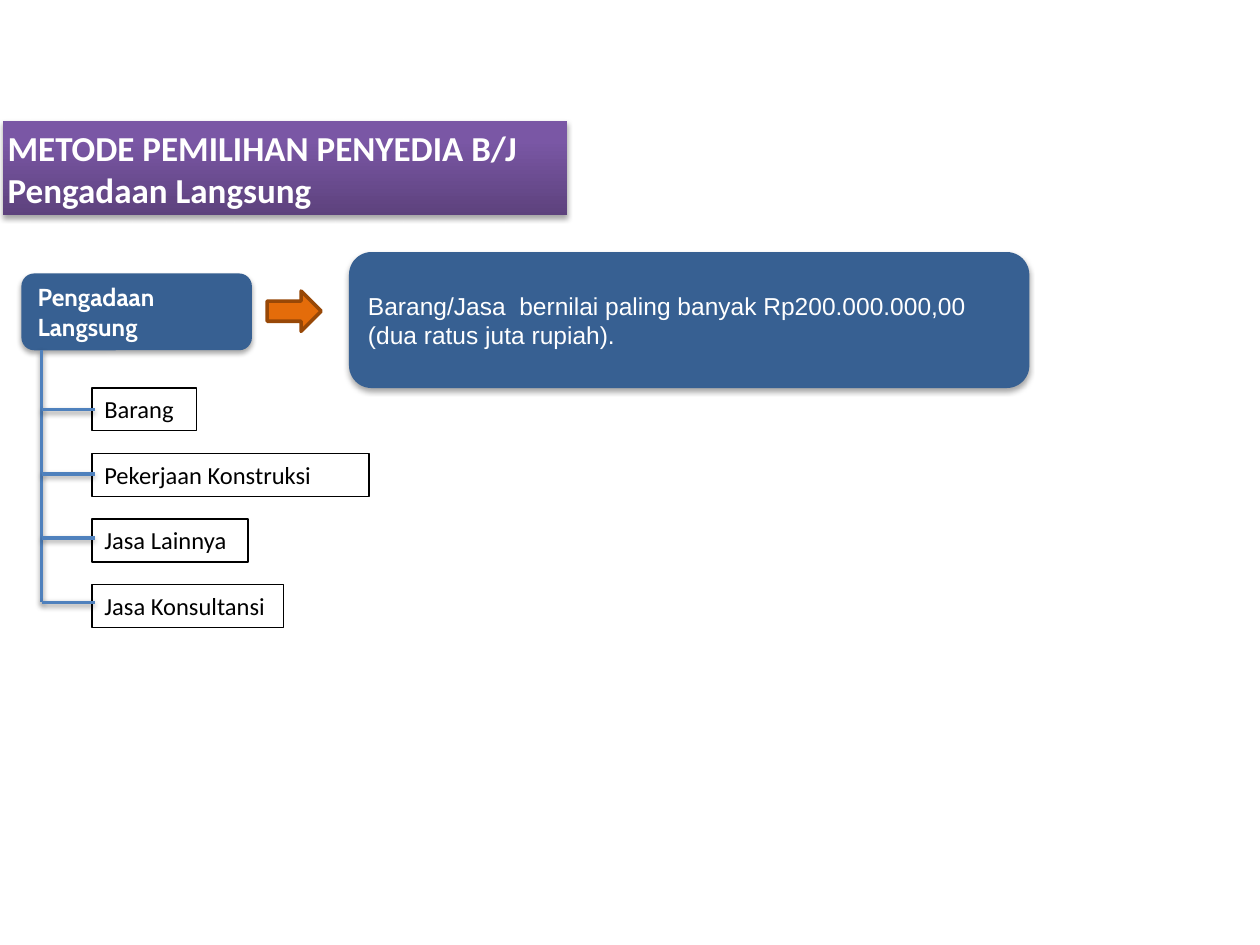
"""Build a slide on direct procurement: its value limit and the four kinds it covers."""
from lxml.etree import SubElement
from pptx import Presentation
from pptx.dml.color import RGBColor
from pptx.enum.shapes import MSO_CONNECTOR as Connector, MSO_SHAPE as Shape
from pptx.enum.text import MSO_ANCHOR as Anchor, MSO_AUTO_SIZE as AutoSize, PP_ALIGN as Align
from pptx.oxml import parse_xml
from pptx.oxml.ns import nsdecls, qn
from pptx.util import Inches, Pt


def add_shadow(item, opacity=35, distance=1.8):
    effects = SubElement(item._element.spPr, qn("a:effectLst"))
    effects.append(parse_xml(
        f'<a:outerShdw {nsdecls("a")} blurRad="{Pt(3.1)}" dist="{Pt(distance)}" dir="5400000" '
        f'algn="ctr" rotWithShape="0"><a:srgbClr val="000000">'
        f'<a:alpha val="{opacity * 1000}"/></a:srgbClr></a:outerShdw>'))


def write(item, lines, size, face, color, bold=False, anchor=Anchor.MIDDLE):
    frame = item.text_frame
    frame.word_wrap = True
    frame.vertical_anchor = anchor
    for index, line in enumerate(lines):
        paragraph = frame.paragraphs[0] if index == 0 else frame.add_paragraph()
        paragraph.alignment = Align.LEFT
        run = paragraph.add_run()
        run.text = line
        run.font.size, run.font.name, run.font.bold = Pt(size), face, bold
        run.font.color.rgb = RGBColor.from_string(color)


deck = Presentation()
deck.slide_width, deck.slide_height = Inches(10), Inches(7.5)
slide = deck.slides.add_slide(deck.slide_layouts[5])
shapes = slide.shapes

heading = shapes.title
heading.left, heading.top, heading.width, heading.height = map(Inches, (0.02, 0.96, 4.48, 0.75))
stops = "".join(f'<a:gs pos="{share * 1000}"><a:srgbClr val="{color}"/></a:gs>'
                for share, color in ((0, "5D427D"), (80, "7A57A5"), (100, "7A56A7")))
heading._element.spPr.append(parse_xml(
    f'<a:gradFill {nsdecls("a")} rotWithShape="1"><a:gsLst>{stops}</a:gsLst>'
    f'<a:lin ang="16200000" scaled="0"/></a:gradFill>'))
add_shadow(heading)
write(heading, ["METODE PEMILIHAN PENYEDIA B/J", "Pengadaan Langsung"], 20, "Calibri", "FFFFFF", True)
heading.text_frame.auto_size = AutoSize.NONE
heading.text_frame.margin_left = heading.text_frame.margin_right = Inches(0.04)

for place, lines, face, bold in (
    ((2.77, 2, 5.4, 1.08), ["Barang/Jasa  bernilai paling banyak Rp200.000.000,00 (dua ratus juta rupiah)."],
     "Arial", False),
    ((0.17, 2.17, 1.83, 0.61), ["Pengadaan", "Langsung"], "Cabin", True),
):
    panel = shapes.add_shape(Shape.ROUNDED_RECTANGLE, *map(Inches, place))
    panel.fill.solid()
    panel.fill.fore_color.rgb = RGBColor.from_string("376092")
    panel.line.fill.background()
    add_shadow(panel)
    write(panel, lines, 14, face, "FFFFFF", bold)

arrow = shapes.add_shape(Shape.RIGHT_ARROW, *map(Inches, (2.12, 2.31, 0.43, 0.32)))
arrow.shadow.inherit = False
arrow.fill.solid()
arrow.fill.fore_color.rgb = RGBColor.from_string("E46C0A")
arrow.line.color.rgb = RGBColor.from_string("984807")
arrow.line.width = Pt(2)

trunk_x, first_branch, branch_step = 0.33, 3.25, 0.51
kinds = (("Barang", 0.83), ("Pekerjaan Konstruksi", 2.2), ("Jasa Lainnya", 1.24), ("Jasa Konsultansi", 1.52))
branches = [first_branch + branch_step * row for row in range(len(kinds))]

for row, (kind, width) in enumerate(kinds):
    label = shapes.add_textbox(*map(Inches, (0.73, 3.08 + 0.52 * row, width, 0.34)))
    label.line.color.rgb = RGBColor.from_string("000000")
    label.line.width = Pt(0.75)
    write(label, [kind], 14, "Calibri", "000000", anchor=Anchor.TOP)
    label.text_frame.auto_size = AutoSize.SHAPE_TO_FIT_TEXT

trunk = (trunk_x, 2.78, trunk_x, branches[-1])
for ends in [trunk] + [(trunk_x, y, 0.75, y) for y in branches]:
    link = shapes.add_connector(Connector.STRAIGHT, *map(Inches, ends))
    link.line.color.rgb = RGBColor.from_string("4F81BD")
    link.line.width = Pt(2)
    add_shadow(link, 38, 1.6)

deck.save("out.pptx")
